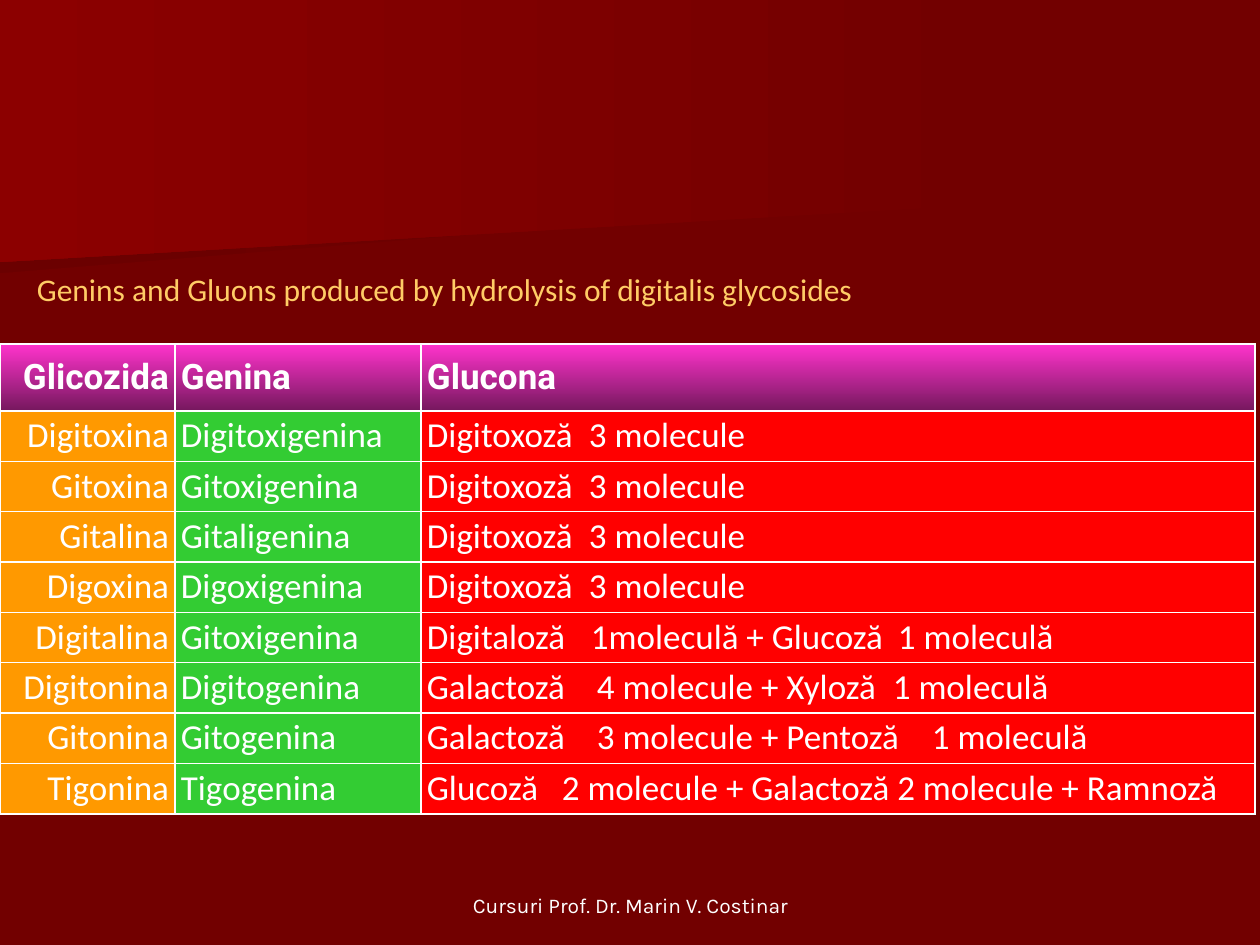
from lxml import etree
from pptx import Presentation
from pptx import util as u
from pptx.dml.color import RGBColor
from pptx.enum import text
from pptx.oxml.ns import qn

PX = 914400 / 126
C = {"bg": "720000", "shade": "6B0000", "glow": "8C0000", "white": "FFFFFF",
     "gold": "FFCC66", "plum": "76185E", "pink": "FF33CC",
     "orange": "FF9900", "green": "33CC33", "red": "FF0000"}
px = lambda n: round(n * PX)


def put_text(tf, words, font="Calibri", size=20, color="white", bold=False,
             align="LEFT", anchor="MIDDLE", spacing=None, tabs=()):
    tf.vertical_anchor = getattr(text.MSO_ANCHOR, anchor)
    p = tf.paragraphs[0]
    p.alignment = getattr(text.PP_ALIGN, align)
    if spacing:
        p.line_spacing = spacing
    if tabs:
        stops = etree.SubElement(p._p.get_or_add_pPr(), qn("a:tabLst"))
        for pos in tabs:
            etree.SubElement(stops, qn("a:tab"), pos=str(px(pos)), algn="l")
    r = p.add_run()
    r.text = words
    r.font.name, r.font.size, r.font.bold = font, u.Pt(size), bold
    r.font.color.rgb = RGBColor.from_string(C[color])


def shade(fill, first, last, angle):
    fill.gradient()
    fill.gradient_angle = angle
    for stop, name in zip(fill.gradient_stops, (first, last)):
        stop.color.rgb = RGBColor.from_string(C[name])


prs = Presentation()
prs.slide_width, prs.slide_height = px(1260), px(945)
s = prs.slides.add_slide(prs.slide_layouts[6])
s.background.fill.solid()
s.background.fill.fore_color.rgb = RGBColor.from_string(C["bg"])

bands = [([(980, 193), (0, 273), (0, 127), (982, 127), (980, 161)], "shade"),
         ([(998, 204), (0, 262), (0, 0), (998, 0)], "glow")]
for points, color in bands:
    fb = s.shapes.build_freeform(*points[0], scale=PX)
    fb.add_line_segments(points[1:], close=True)
    sp = fb.convert_to_shape()
    sp.shadow.inherit = False
    sp.line.fill.background()
    shade(sp.fill, "bg", color, 180)

labels = [
    ((437, 887, 387, 37), True, "Cursuri Prof. Dr. Marin V. Costinar",
     dict(font="Karla", size=12, align="CENTER", anchor="BOTTOM")),
    ((31, 266, 830, 45), False,
     "Genins and Gluons produced by hydrolysis of digitalis glycosides",
     dict(size=18, color="gold")),
]
for box, wrap, words, fmt in labels:
    tf = s.shapes.add_textbox(*map(px, box)).text_frame
    tf.word_wrap = wrap
    tf.margin_left = tf.margin_right = tf.margin_top = tf.margin_bottom = px(6)
    put_text(tf, words, **fmt)

digitoxose = ("Digitoxoză\t3 molecule", (162,))
rows = [
    ("Glicozida", "Genina", ("Glucona", ())),
    ("Digitoxina", "Digitoxigenina", digitoxose),
    ("Gitoxina", "Gitoxigenina", digitoxose),
    ("Gitalina", "Gitaligenina", digitoxose),
    ("Digoxina", "Digoxigenina", digitoxose),
    ("Digitalina", "Gitoxigenina",
     ("Digitaloză\t1moleculă + Glucoză\t1 moleculă", (164, 471))),
    ("Digitonina", "Digitogenina",
     ("Galactoză\t4 molecule + Xyloză\t1 moleculă", (170, 466))),
    ("Gitonina", "Gitogenina",
     ("Galactoză\t3 molecule + Pentoză\t1 moleculă", (170, 505))),
    ("Tigonina", "Tigogenina",
     ("Glucoză\t2 molecule + Galactoză 2 molecule + Ramnoză", (135,))),
]
columns = [(175, "orange", "RIGHT"), (246, "green", "LEFT"), (834, "red", "LEFT")]
header_h, body_h = px(67), px(403) // (len(rows) - 1)
table = s.shapes.add_table(len(rows), 3, 0, px(344), px(1255), px(470)).table
table.first_row = table.horz_banding = False
for col, (width, _, _) in zip(table.columns, columns):
    col.width = px(width)

for i, (glycoside, genin, (glucon, tabs)) in enumerate(rows):
    table.rows[i].height = body_h if i else header_h
    for j, words in enumerate((glycoside, genin, glucon)):
        _, color, align = columns[j]
        cell = table.cell(i, j)
        cell.margin_left = cell.margin_right = px(6)
        cell.margin_top = cell.margin_bottom = px(6)
        cell.vertical_anchor = text.MSO_ANCHOR.MIDDLE
        fmt = dict(spacing=0.9, tabs=tabs if j == 2 else ()) if i else dict(font="Roboto", bold=True)
        put_text(cell.text_frame, words, align=align, **fmt)
        tcPr = cell._tc.get_or_add_tcPr()
        for side in ("lnL", "lnR", "lnT", "lnB"):
            ln = etree.SubElement(tcPr, qn(f"a:{side}"), w=str(u.Pt(1)))
            line = etree.SubElement(ln, qn("a:solidFill"))
            etree.SubElement(line, qn("a:srgbClr"), val=C["white"])
        if i:
            cell.fill.solid()
            cell.fill.fore_color.rgb = RGBColor.from_string(C[color])
        else:
            shade(cell.fill, "plum", "pink", 90)

prs.save("out.pptx")
